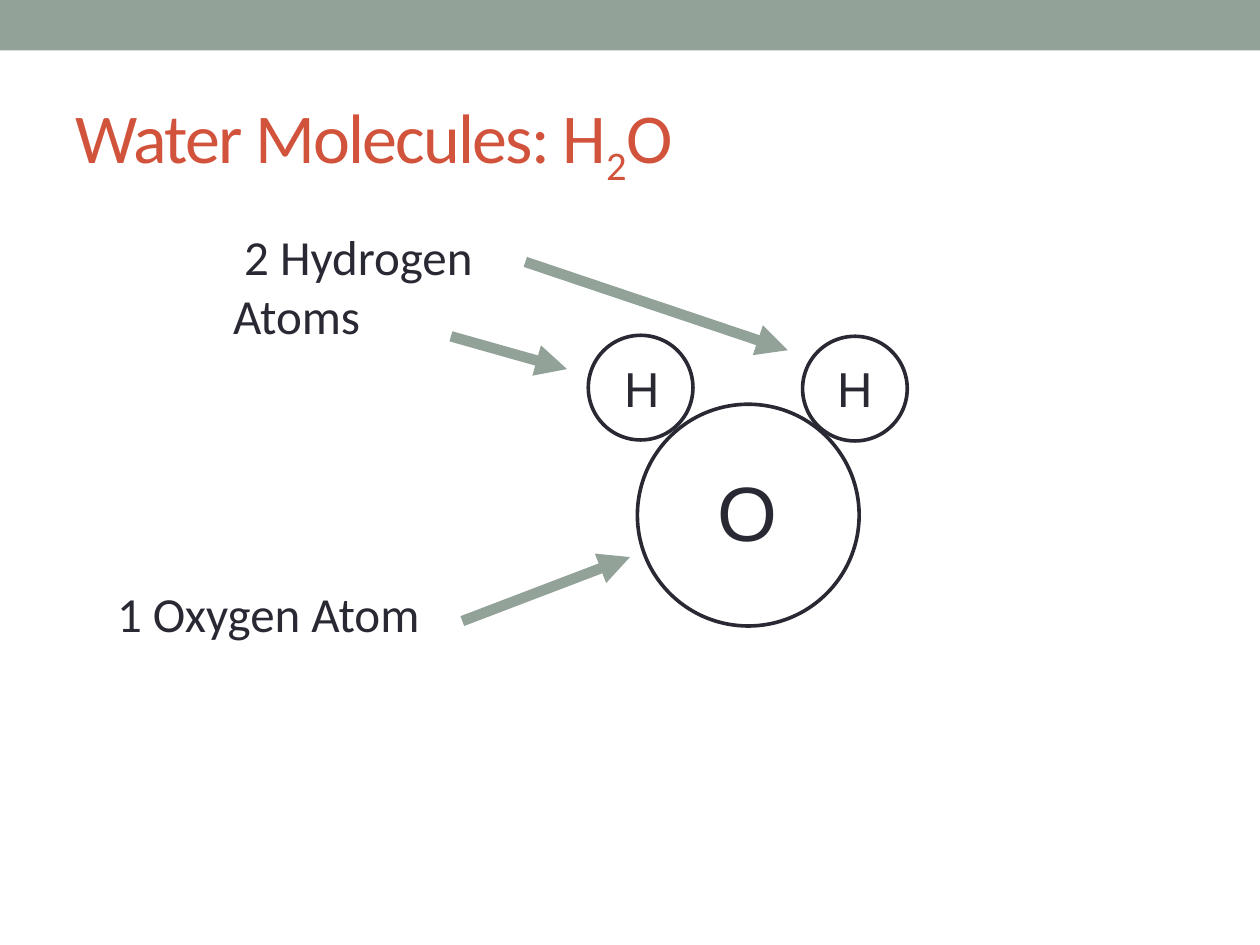
import dataclasses

import lxml.etree
import pptx
import pptx.dml.color
import pptx.enum.shapes
import pptx.enum.text
import pptx.oxml.ns
import pptx.util

Cm = pptx.util.Cm
Pt = pptx.util.Pt
qn = pptx.oxml.ns.qn
RGB = pptx.dml.color.RGBColor.from_string
Shape = pptx.enum.shapes.MSO_SHAPE
Align = pptx.enum.text.PP_ALIGN
Anchor = pptx.enum.text.MSO_ANCHOR


@dataclasses.dataclass(frozen=True)
class Theme:
    sage = RGB("93A299")
    red = RGB("D2533C")
    ink = RGB("292934")
    white = RGB("FFFFFF")
    title_size = Pt(40)
    oxygen_size = Pt(44)
    label_size = Pt(28)
    outline = Pt(2.08)
    arrow = Pt(6)
    body_font = "Calibri"
    atom_font = "Arial"


theme = Theme()
deck = pptx.Presentation()
deck.slide_width, deck.slide_height = Cm(25.4), Cm(19.05)
page = deck.slides.add_slide(deck.slide_layouts[6])


def add_text(text, left, top, width, height, size=theme.label_size,
             font=theme.body_font, color=theme.ink, align=Align.LEFT,
             anchor=Anchor.TOP, spacing=None, subscript=None):
    """Add a text box; the subscript character, if given, is set below the line."""
    box = page.shapes.add_textbox(Cm(left), Cm(top), Cm(width), Cm(height))
    box.text_frame.word_wrap = True
    box.text_frame.vertical_anchor = anchor
    para = box.text_frame.paragraphs[0]
    para.alignment = align
    for part in text.partition(subscript) if subscript else [text]:
        span = para.add_run()
        span.text = part
        span.font.size = size
        span.font.name = font
        span.font.color.rgb = color
        properties = span.font._element
        if spacing is not None:
            properties.set("spc", str(spacing))
        if part == subscript:
            properties.set("baseline", "-25000")


banner = page.shapes.add_shape(Shape.RECTANGLE, 0, 0, deck.slide_width, Cm(1.02))
banner.shadow.inherit = False
banner.fill.solid()
banner.fill.fore_color.rgb = theme.sage
banner.line.fill.background()

# Hydrogen first, so that the oxygen atom overlaps both
for left, top, diameter in [(16.18, 6.78, 2.11), (11.86, 6.76, 2.11), (12.85, 8.15, 4.47)]:
    atom = page.shapes.add_shape(Shape.OVAL, Cm(left), Cm(top), Cm(diameter), Cm(diameter))
    atom.shadow.inherit = False
    atom.fill.solid()
    atom.fill.fore_color.rgb = theme.white
    atom.line.color.rgb = theme.ink
    atom.line.width = theme.outline

add_text("Water Molecules: H2O", 1.27, 1.47, 22.86, 2.74, size=theme.title_size,
         color=theme.red, anchor=Anchor.MIDDLE, spacing=-100, subscript="2")
add_text(" 2 Hydrogen Atoms", 4.45, 4.45, 5.72, 2.64)
add_text("1 Oxygen Atom", 2.11, 11.63, 6.78, 1.45)

add_text("O", 14.22, 9.25, 1.7, 2.13, size=theme.oxygen_size,
         font=theme.atom_font, align=Align.CENTER)
for left in (12.09, 16.38):
    add_text("H", left, 7.11, 1.7, 1.45, font=theme.atom_font, align=Align.CENTER)

for start_x, start_y, end_x, end_y in [
    (10.59, 5.28, 15.88, 7.06),
    (9.09, 6.78, 11.43, 7.44),
    (9.32, 12.52, 12.7, 11.23),
]:
    arrow = page.shapes.add_connector(
        pptx.enum.shapes.MSO_CONNECTOR.STRAIGHT,
        Cm(start_x), Cm(start_y), Cm(end_x), Cm(end_y))
    arrow.line.color.rgb = theme.sage
    arrow.line.width = theme.arrow
    lxml.etree.SubElement(arrow.line._get_or_add_ln(), qn("a:tailEnd"), type="triangle")
    lxml.etree.SubElement(arrow._element.spPr, qn("a:effectLst"))

deck.save("out.pptx")
